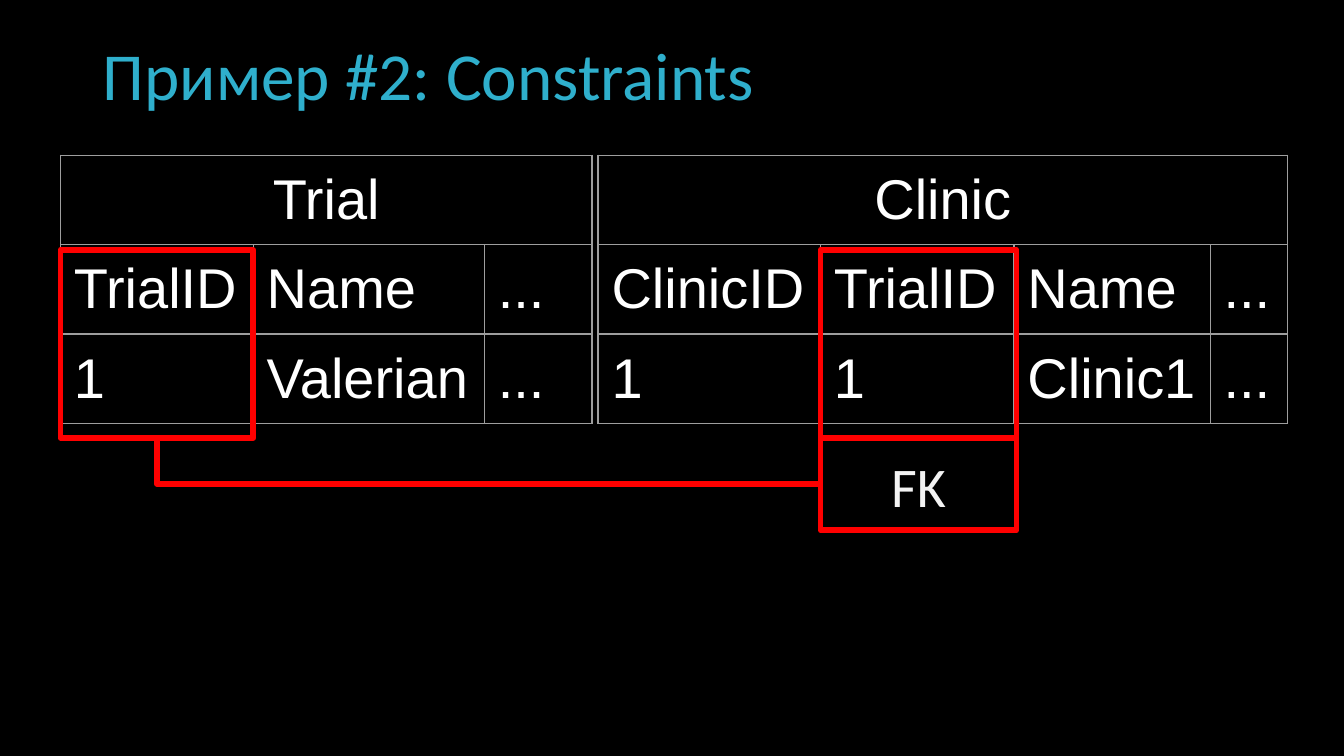
from typing import NamedTuple, Optional

from lxml.etree import SubElement
from pptx import Presentation
from pptx.dml.color import RGBColor
from pptx.enum.shapes import MSO_CONNECTOR, MSO_SHAPE
from pptx.enum.text import MSO_ANCHOR, PP_ALIGN
from pptx.oxml.ns import qn
from pptx.util import Emu, Pt

PX = 4572  # 200 px to the inch
BLACK, WHITE, PALE = "000000", "FFFFFF", "F3F3F3"
TEAL, RED, GREY = "2FAFCC", "FF0000", "9E9E9E"
TABLE_TOP, ROW_HEIGHT = 231, 84
KEY_TOP, KEY_HEIGHT = 372, 280


class Relation(NamedTuple):
    name: str
    left: int
    widths: list[int]
    rows: list[list[str]]


class Frame(NamedTuple):
    left: int
    top: int
    width: int
    height: int
    fill: Optional[str] = None
    label: str = ""


RELATIONS = [
    Relation("Trial", 90, [287, 344, 160],
             [["TrialID", "Name", "..."], ["1", "Valerian", "..."]]),
    Relation("Clinic", 890, [331, 288, 292, 115],
             [["ClinicID", "TrialID", "Name", "..."], ["1", "1", "Clinic1", "..."]]),
]
PRIMARY_KEY = Frame(90, KEY_TOP, 287, KEY_HEIGHT)
FOREIGN_KEY = Frame(1221, KEY_TOP, 292, KEY_HEIGHT)
FK_TAG = Frame(1221, KEY_TOP + KEY_HEIGHT, 292, 137, BLACK, "FK")


def px(length: int) -> Emu:
    return Emu(length * PX)


def color(value: str) -> RGBColor:
    return RGBColor.from_string(value)


def set_margins(target, horizontal: int, vertical: int) -> None:
    target.margin_left = target.margin_right = px(horizontal)
    target.margin_top = target.margin_bottom = px(vertical)


def write(text_frame, text: str, size: int, font: str, ink: str, align=PP_ALIGN.LEFT):
    paragraph = text_frame.paragraphs[0]
    paragraph.text = text
    paragraph.alignment = align
    paragraph.font.size = Pt(size)
    paragraph.font.name = font
    paragraph.font.color.rgb = color(ink)
    return paragraph


def add_borders(cell) -> None:
    properties = cell._tc.get_or_add_tcPr()
    for side in ("a:lnL", "a:lnR", "a:lnT", "a:lnB"):
        line = SubElement(properties, qn(side), w=str(Pt(0.75)))
        SubElement(SubElement(line, qn("a:solidFill")), qn("a:srgbClr"), val=GREY)


def draw_relation(shapes, relation: Relation) -> None:
    columns = len(relation.widths)
    grid = [[relation.name] + [""] * (columns - 1)] + relation.rows
    table = shapes.add_table(
        len(grid), columns, px(relation.left), px(TABLE_TOP),
        px(sum(relation.widths)), px(ROW_HEIGHT * len(grid))).table
    table.first_row = table.horz_banding = False
    for column, width in zip(table.columns, relation.widths):
        column.width = px(width)
    table.cell(0, 0).merge(table.cell(0, columns - 1))
    for row, texts in enumerate(grid):
        for column, text in enumerate(texts):
            cell = table.cell(row, column)
            add_borders(cell)
            cell.fill.background()
            set_margins(cell, 20, 20)
            align = PP_ALIGN.LEFT if row else PP_ALIGN.CENTER
            write(cell.text_frame, text, 30, "Arial", WHITE, align)


def style_line(line) -> None:
    line.color.rgb = color(RED)
    line.width = Pt(3)


def draw_frame(shapes, frame: Frame):
    box = shapes.add_shape(MSO_SHAPE.RECTANGLE, px(frame.left), px(frame.top),
                           px(frame.width), px(frame.height))
    box.shadow.inherit = False
    style_line(box.line)
    if frame.fill:
        box.fill.solid()
        box.fill.fore_color.rgb = color(frame.fill)
    else:
        box.fill.background()
    if frame.label:
        set_margins(box.text_frame, 20, 20)
        box.text_frame.vertical_anchor = MSO_ANCHOR.TOP
        write(box.text_frame, frame.label, 30, "Calibri", PALE, PP_ALIGN.CENTER)
    return box


def draw_title(shapes, text: str) -> None:
    text_frame = shapes.add_textbox(px(138), px(55), px(1808), px(124)).text_frame
    text_frame.word_wrap = True
    text_frame.vertical_anchor = MSO_ANCHOR.MIDDLE
    set_margins(text_frame, 15, 8)
    write(text_frame, text, 36, "Calibri", TEAL).line_spacing = 0.9


def link_keys(shapes, tag, key) -> None:
    """Join the tag's left side to the key's bottom with a single bend."""
    link = shapes.add_connector(
        MSO_CONNECTOR.ELBOW, tag.left, tag.top + tag.height // 2,
        key.left + key.width // 2, key.top + key.height)
    link.begin_connect(tag, 1)
    link.end_connect(key, 2)
    style_line(link.line)
    properties = link._element.spPr
    properties.find(qn("a:prstGeom")).set("prst", "bentConnector2")
    SubElement(properties, qn("a:effectLst"))


def main() -> None:
    presentation = Presentation()
    presentation.slide_width, presentation.slide_height = px(2000), px(1125)
    slide = presentation.slides.add_slide(presentation.slide_layouts[6])
    slide.background.fill.solid()
    slide.background.fill.fore_color.rgb = color(BLACK)
    shapes = slide.shapes

    for relation in RELATIONS:
        draw_relation(shapes, relation)
    primary_key = draw_frame(shapes, PRIMARY_KEY)
    draw_title(shapes, "Пример #2: Constraints")
    draw_frame(shapes, FOREIGN_KEY)
    fk_tag = draw_frame(shapes, FK_TAG)
    link_keys(shapes, fk_tag, primary_key)

    presentation.save("out.pptx")


if __name__ == "__main__":
    main()
